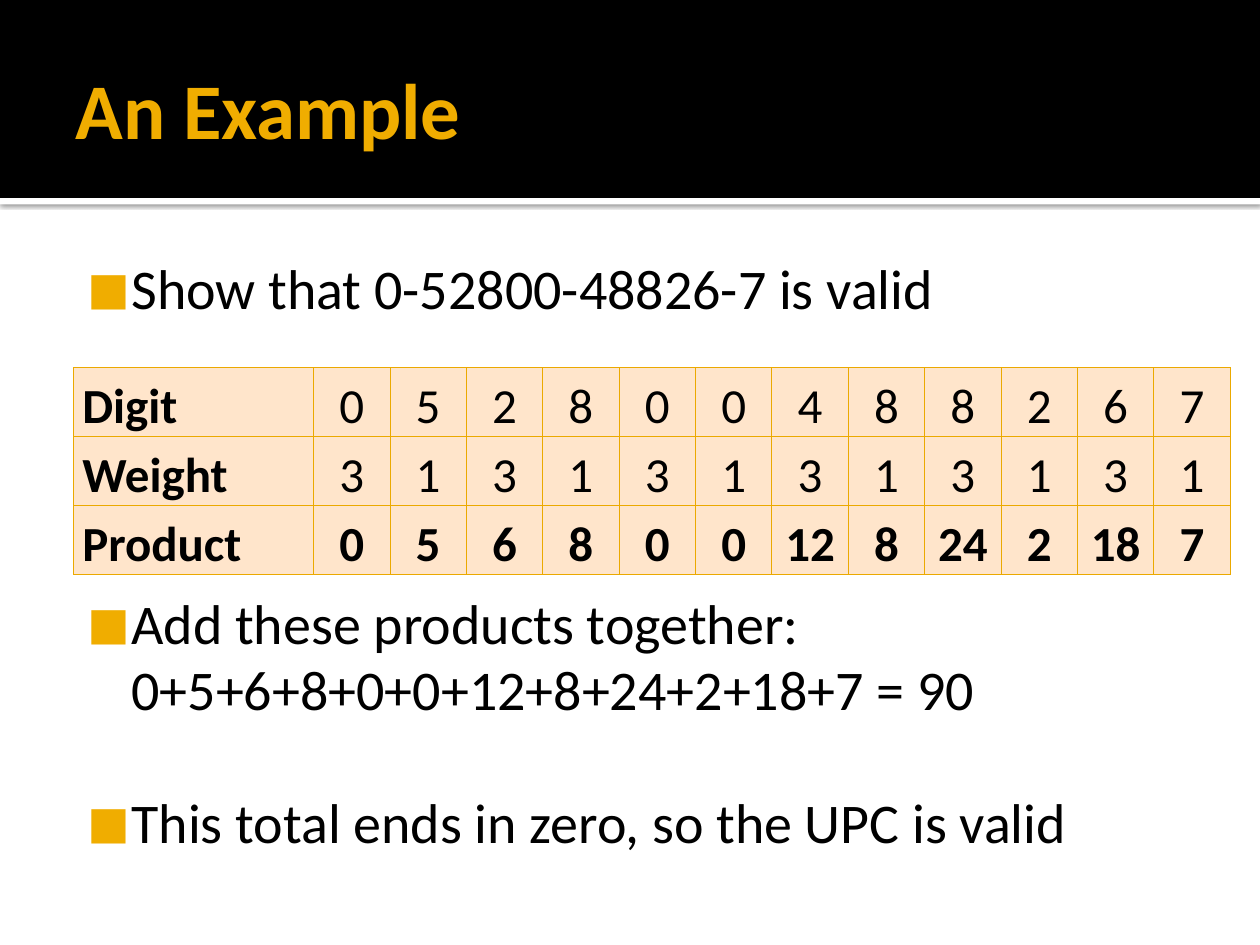
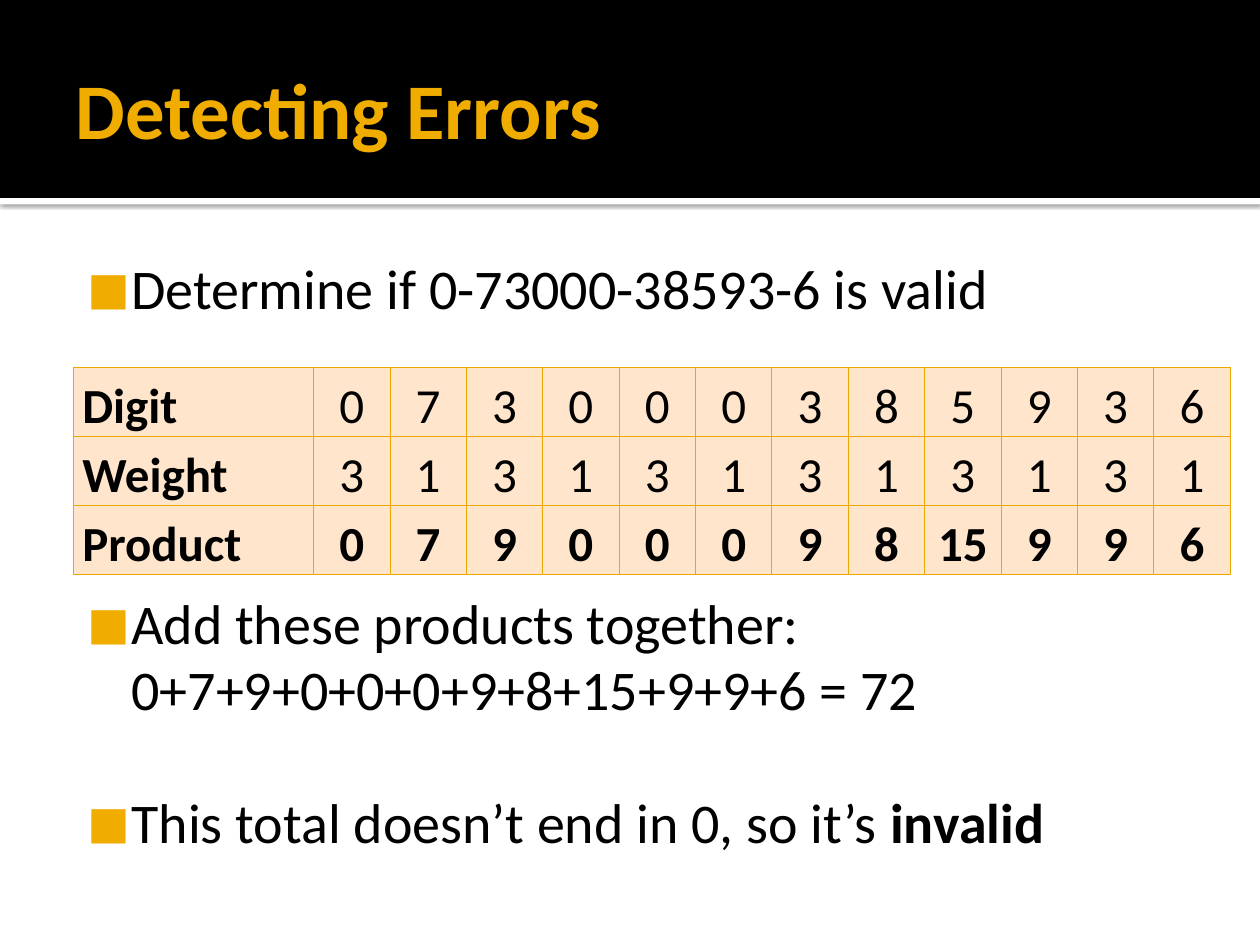
from lxml.etree import SubElement
from pptx import Presentation
from pptx.dml.color import RGBColor
from pptx.enum.shapes import MSO_SHAPE
from pptx.enum.text import MSO_ANCHOR, PP_ALIGN
from pptx.oxml.ns import qn
from pptx.util import Cm, Pt

BLACK = RGBColor(0x00, 0x00, 0x00)
WHITE = RGBColor(0xFF, 0xFF, 0xFF)
GOLD = RGBColor(0xF0, 0xAD, 0x00)
GRID_GOLD = RGBColor(0xEB, 0xA9, 0x00)
PEACH = RGBColor(0xFF, 0xE5, 0xCB)

SLIDE_WIDTH = Cm(25.4)
BAND_HEIGHT = Cm(3.99)
LINE_PITCH = 38.4

TITLE_FONT = {"name": "Calibri", "size": Pt(45), "bold": True}
BODY_FONT = {"name": "Calibri", "size": Pt(32)}
CELL_FONT = {"name": "Calibri", "size": Pt(28)}

TITLE_FRAME = {"vertical_anchor": MSO_ANCHOR.MIDDLE, "word_wrap": True,
               "margin_left": Cm(0.25), "margin_top": Cm(0.13),
               "margin_right": Cm(0.13), "margin_bottom": Cm(0.13)}
BODY_FRAME = {"word_wrap": True, "margin_left": Cm(0.16), "margin_top": Cm(0.25),
              "margin_right": Cm(0.25), "margin_bottom": Cm(0.13)}
CELL_FORMAT = {"vertical_anchor": MSO_ANCHOR.MIDDLE, "margin_left": Cm(0.18),
               "margin_right": Cm(0.18), "margin_top": 0, "margin_bottom": 0}

EXAMPLES = [
    ("An Example", "Show that {} is valid", "0-52800-48826-7",
     [("This total ends in zero, so the UPC is valid", False)]),
    ("Detecting Errors", "Determine if {} is valid", "0-73000-38593-6",
     [("This total doesn’t end in 0, so it’s ", False), ("invalid", True)]),
]


def apply_format(target, values):
    for name, value in values.items():
        setattr(target, name, value)


def style_runs(paragraph, values, color):
    for run in paragraph.runs:
        apply_format(run.font, values)
        run.font.color.rgb = color


def add_color(parent, color, alpha=None):
    srgb = SubElement(parent, qn("a:srgbClr"), val=str(color))
    if alpha:
        SubElement(srgb, qn("a:alpha"), val=str(alpha))


def add_band(slide, top, height, color):
    band = slide.shapes.add_shape(MSO_SHAPE.RECTANGLE, 0, top, SLIDE_WIDTH, height)
    band.shadow.inherit = False
    band.fill.solid()
    band.fill.fore_color.rgb = color
    band.line.fill.background()
    return band


def add_header_bands(slide):
    edge = add_band(slide, BAND_HEIGHT, Cm(0.13), WHITE)
    effects = edge.element.spPr.find(qn("a:effectLst"))
    shadow = SubElement(effects, qn("a:outerShdw"), blurRad=str(Pt(2.5)),
                        dist=str(Pt(0.8)), dir="5400000", rotWithShape="0")
    add_color(shadow, BLACK, 60000)
    header = add_band(slide, 0, BAND_HEIGHT, BLACK)
    layout_tree = slide.slide_layout.shapes.element
    for position, band in enumerate((edge, header), start=2):
        layout_tree.insert(position, band.element)


def set_title(slide, text):
    title = slide.shapes.title
    apply_format(title, {"left": Cm(1.27), "top": Cm(0.43),
                         "width": Cm(22.86), "height": Cm(3.48)})
    apply_format(title.text_frame, TITLE_FRAME)
    title.text_frame.text = text
    heading = title.text_frame.paragraphs[0]
    heading.alignment = PP_ALIGN.LEFT
    style_runs(heading, TITLE_FONT, GOLD)


def format_bullet(paragraph, lines_before):
    paragraph.line_spacing = 0.98
    paragraph.space_before = Pt(lines_before * LINE_PITCH)
    properties = paragraph._p.get_or_add_pPr()
    properties.set("marL", str(Cm(1.22)))
    properties.set("indent", str(Cm(-0.89)))
    add_color(SubElement(properties, qn("a:buClr")), GOLD)
    SubElement(properties, qn("a:buSzPct"), val="80000")
    SubElement(properties, qn("a:buFont"), typeface="Calibri")
    SubElement(properties, qn("a:buChar"), char="■")


def add_steps(slide, task, addition, conclusion):
    body = slide.shapes.add_textbox(Cm(1.27), Cm(4.93), Cm(22.86), Cm(12.85))
    frame = body.text_frame
    apply_format(frame, BODY_FRAME)
    task_step, addition_step = frame.paragraphs[0], frame.add_paragraph()
    conclusion_step = frame.add_paragraph()
    task_step.text = task
    addition_step.text = f"Add these products together:\v{addition}"
    for text, bold in conclusion:
        run = conclusion_step.add_run()
        run.text = text
        run.font.bold = bold
    for step, lines_before in ((task_step, 0), (addition_step, 4), (conclusion_step, 1)):
        format_bullet(step, lines_before)
        style_runs(step, BODY_FONT, BLACK)


def add_cell_borders(cell):
    properties = cell._tc.get_or_add_tcPr()
    for index, side in enumerate(("a:lnL", "a:lnR", "a:lnT", "a:lnB")):
        border = properties.makeelement(qn(side), {"w": str(Pt(0.5))})
        add_color(SubElement(border, qn("a:solidFill")), GRID_GOLD)
        properties.insert(index, border)


def fill_cell(cell, text, bold, alignment):
    apply_format(cell, CELL_FORMAT)
    cell.fill.solid()
    cell.fill.fore_color.rgb = PEACH
    add_cell_borders(cell)
    cell.text = str(text)
    paragraph = cell.text_frame.paragraphs[0]
    apply_format(paragraph, {"alignment": alignment, "line_spacing": 1.15})
    style_runs(paragraph, {**CELL_FONT, "bold": bold}, BLACK)


def add_checksum_table(slide, rows):
    label_width, digit_width, row_height = Cm(4.84), Cm(1.54), Cm(1.39)
    column_count = len(rows[0])
    table = slide.shapes.add_table(
        len(rows), column_count, Cm(1.48), Cm(7.41),
        label_width + digit_width * (column_count - 1), row_height * len(rows)).table
    apply_format(table, {"first_row": False, "horz_banding": False})
    for index, column in enumerate(table.columns):
        column.width = digit_width if index else label_width
    for row_index, values in enumerate(rows):
        table.rows[row_index].height = row_height
        for index, value in enumerate(values):
            bold = index == 0 or values[0] == "Product"
            alignment = PP_ALIGN.CENTER if index else PP_ALIGN.LEFT
            fill_cell(table.cell(row_index, index), value, bold, alignment)


def add_example(slide, title, task, code, conclusion):
    digits = [int(digit) for digit in code.replace("-", "")]
    weights = [1 if index % 2 else 3 for index in range(len(digits))]
    products = [digit * weight for digit, weight in zip(digits, weights)]
    addition = f"{'+'.join(map(str, products))} = {sum(products)}"
    set_title(slide, title)
    add_steps(slide, task.format(code), addition, conclusion)
    add_checksum_table(slide, [["Digit", *digits], ["Weight", *weights],
                               ["Product", *products]])


def main():
    deck = Presentation()
    apply_format(deck, {"slide_width": SLIDE_WIDTH, "slide_height": Cm(19.05)})
    title_only = deck.slide_layouts[5]
    slides = [deck.slides.add_slide(title_only) for _ in EXAMPLES]
    add_header_bands(slides[0])
    for slide, example in zip(slides, EXAMPLES):
        add_example(slide, *example)
    deck.save("out.pptx")


if __name__ == "__main__":
    main()
